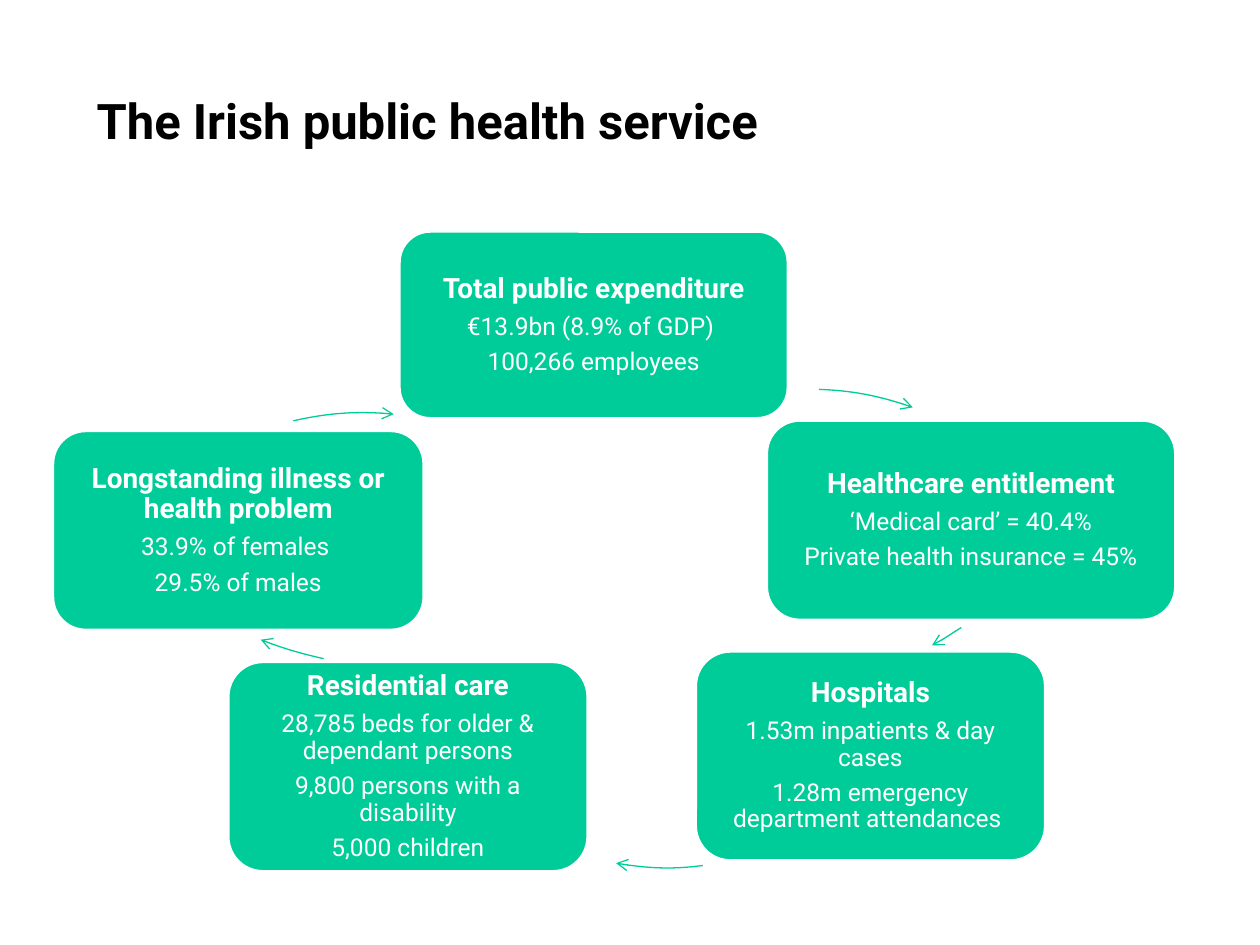
from dataclasses import dataclass

from lxml.etree import SubElement
from pptx import Presentation
from pptx.dml.color import RGBColor
from pptx.enum.shapes import MSO_SHAPE
from pptx.enum.text import MSO_ANCHOR, MSO_AUTO_SIZE, PP_ALIGN
from pptx.oxml.ns import qn
from pptx.util import Pt


@dataclass(frozen=True)
class Theme:
    font: str = "Roboto"
    title_color: RGBColor = RGBColor(0, 0, 0)
    accent: RGBColor = RGBColor(0x00, 0xCC, 0x99)
    light: RGBColor = RGBColor(0xFF, 0xFF, 0xFF)
    title_size: float = 28
    heading_size: float = 16
    body_size: float = 14


class SlideBuilder:
    def __init__(self, slide, theme):
        self.slide = slide
        self.theme = theme

    def style(self, paragraph, size, color, bold):
        font = paragraph.font
        font.name = self.theme.font
        font.size = Pt(size)
        font.bold = bold
        font.color.rgb = color

    def title(self, text, left, top, width, height):
        shape = self.slide.shapes.title
        shape.left, shape.top = Pt(left), Pt(top)
        shape.width, shape.height = Pt(width), Pt(height)
        frame = shape.text_frame
        frame.text = text
        frame.word_wrap = True
        frame.auto_size = MSO_AUTO_SIZE.NONE
        frame.vertical_anchor = MSO_ANCHOR.MIDDLE
        paragraph = frame.paragraphs[0]
        paragraph.alignment = PP_ALIGN.LEFT
        self.style(paragraph, self.theme.title_size, self.theme.title_color, True)

    def card(self, bounds, heading, facts):
        theme = self.theme
        shape = self.slide.shapes.add_shape(
            MSO_SHAPE.ROUNDED_RECTANGLE, *(Pt(length) for length in bounds))
        shape.shadow.inherit = False
        shape.fill.solid()
        shape.fill.fore_color.rgb = theme.accent
        shape.line.color.rgb = theme.light
        shape.line.width = Pt(2)
        frame = shape.text_frame
        frame.word_wrap = True
        frame.vertical_anchor = MSO_ANCHOR.MIDDLE
        frame.margin_left = frame.margin_right = Pt(5.3)
        frame.margin_top = frame.margin_bottom = Pt(5.3)
        frame.text = "\n".join([heading, *facts])
        for index, paragraph in enumerate(frame.paragraphs):
            size = theme.body_size if index else theme.heading_size
            paragraph.alignment = PP_ALIGN.CENTER
            paragraph.line_spacing = 0.9
            paragraph.space_after = Pt(0.35 * size)
            self.style(paragraph, size, theme.light, index == 0)

    def curved_arrow(self, left, top, controls):
        # The frame is the square around the whole circle of the curve
        builder = self.slide.shapes.build_freeform(Pt(left), Pt(top))
        builder.add_line_segments(
            [(Pt(left + CIRCLE), Pt(top + CIRCLE))], close=False)
        shape = builder.convert_to_shape()

        # One cubic curve takes the place of the diagonal
        outline = next(shape.element.iter(qn("a:path")))
        for segment in list(outline):
            outline.remove(segment)
        start = SubElement(outline, qn("a:moveTo"))
        curve = SubElement(outline, qn("a:cubicBezTo"))
        for index, (x, y) in enumerate(controls):
            SubElement(curve if index else start, qn("a:pt"),
                       x=str(Pt(x - left)), y=str(Pt(y - top)))

        shape.shadow.inherit = False
        shape.fill.background()
        shape.line.color.rgb = self.theme.accent
        shape.line.width = Pt(0.75)
        SubElement(shape.line._get_or_add_ln(), qn("a:tailEnd"), type="arrow")


# Cards in clockwise order: left, top, width, height; heading; facts
CARDS = [
    ((228, 132, 222.5, 107.3), "Total public expenditure",
     ["€13.9bn (8.9% of GDP) ", "100,266 employees"]),
    ((437.9, 240, 234, 114.5), "Healthcare entitlement",
     ["‘Medical card’ = 40.4%", "Private health insurance = 45%"]),
    ((397.3, 372, 200.2, 120), "Hospitals",
     ["1.53m inpatients & day cases", "1.28m emergency department attendances "]),
    ((130.2, 378, 205.9, 120.2), "Residential care",
     ["28,785 beds for older & dependant persons",
      "9,800 persons with a disability", "5,000 children"]),
    ((30, 246, 212.4, 114.3), "Longstanding illness or health problem",
     ["33.9% of females ", "29.5% of males"]),
]

# Arrow after each card: left and top of its circle, curve control points
CIRCLE = 337.7
ARROWS = [
    (293.8, 222.5, [(468, 222.5), (486.7, 223.2), (504.7, 226.8), (521.6, 232.8)]),
    (282.2, 51.8, [(549.4, 358.6), (543.6, 362.2), (538.6, 365.8), (532.6, 368.8)]),
    (211.7, 157.7, [(401.6, 494.6), (385.2, 496.8), (368.6, 496.1), (352.1, 493.3)]),
    (46.1, 41, [(185, 376.4), (172.8, 373.7), (160.6, 370.1), (149, 365.6)]),
    (38.9, 235.4, [(167.6, 240.5), (186.5, 236.2), (205.9, 234.7), (225, 236.7)]),
]


def main():
    presentation = Presentation()
    presentation.slide_width, presentation.slide_height = Pt(720), Pt(540)
    slide = presentation.slides.add_slide(presentation.slide_layouts[5])
    builder = SlideBuilder(slide, Theme())

    # Title
    builder.title("The Irish public health service", 48, 48.2, 498.2, 41)

    # Cycle of cards and arrows
    for card, arrow in zip(CARDS, ARROWS):
        builder.card(*card)
        builder.curved_arrow(*arrow)

    presentation.save("out.pptx")


if __name__ == "__main__":
    main()
